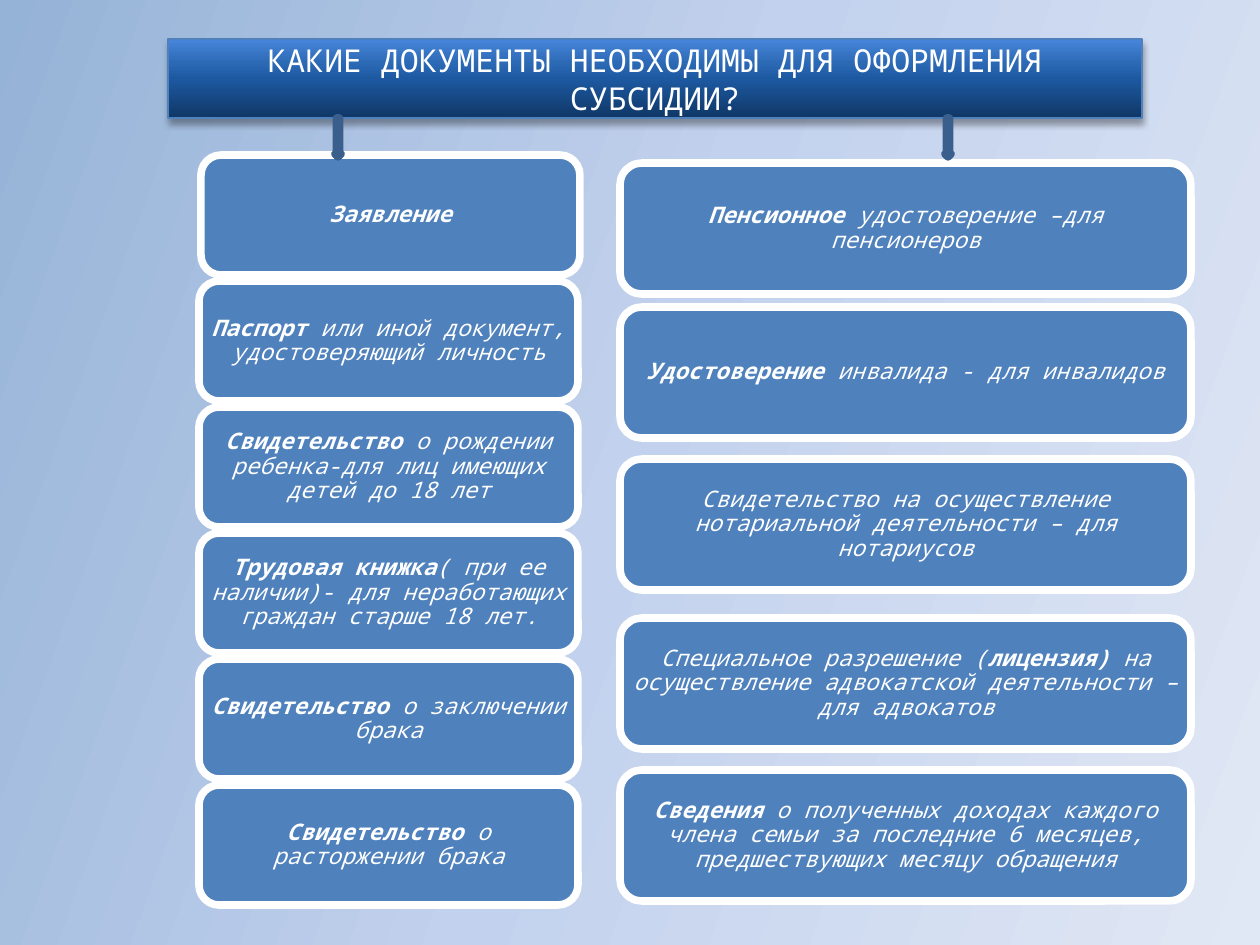
"""Build a slide listing the documents needed to apply for a subsidy."""
from lxml.etree import SubElement
from pptx import Presentation
from pptx.dml.color import RGBColor
from pptx.enum.shapes import MSO_SHAPE as Shape
from pptx.enum.text import MSO_ANCHOR as Anchor, PP_ALIGN as Align
from pptx.oxml.ns import qn
from pptx.util import Pt

PX = 914400 / 126
FONT = "Noto Sans Mono"
BLUE, WHITE, EDGE = "4F81BD", "FFFFFF", "3A5F8C"
color = RGBColor.from_string


def set_gradient(fill, element, stops, clockwise):
    fill.gradient()
    fill.gradient_angle = 360 - clockwise
    stop_list = next(element.iter(qn("a:gsLst")))
    for stop in list(stop_list):
        stop_list.remove(stop)
    for position, value in stops:
        stop = SubElement(stop_list, qn("a:gs"), pos=str(position * 1000))
        SubElement(stop, qn("a:srgbClr"), val=value)


def add_block(kind, bounds, line, width, text="", size=13, margins=(6, 4)):
    block = page.shapes.add_shape(kind, *(round(value * PX) for value in bounds))
    block.shadow.inherit = False
    block.fill.solid()
    block.fill.fore_color.rgb = color(BLUE)
    block.line.color.rgb = color(line)
    block.line.width = Pt(width)
    if text:
        frame = block.text_frame
        frame.word_wrap = True
        frame.vertical_anchor = Anchor.MIDDLE
        frame.margin_left = frame.margin_right = round(margins[0] * PX)
        frame.margin_top = frame.margin_bottom = round(margins[1] * PX)
        para = frame.paragraphs[0]
        para.alignment = Align.CENTER
        para.font.name = FONT
        para.font.size = Pt(size)
        para.font.color.rgb = color(WHITE)
        for index, part in enumerate(text.split("*")):
            if part:
                span = para.add_run()
                span.text = part
                span.font.bold = index % 2 == 1
        if kind == Shape.ROUNDED_RECTANGLE:
            para.font.italic = True
            para.line_spacing = 0.9
    return block


deck = Presentation()
deck.slide_width, deck.slide_height = round(1260 * PX), round(945 * PX)
page = deck.slides.add_slide(deck.slide_layouts[6])
set_gradient(page.background.fill, page.element,
             [(0, "95B3D7"), (50, "C2D1ED"), (100, "E1E8F5")], 20)

title = add_block(Shape.RECTANGLE, (168, 39, 974, 79), BLUE, 0.75,
                  "КАКИЕ ДОКУМЕНТЫ НЕОБХОДИМЫ ДЛЯ ОФОРМЛЕНИЯ СУБСИДИИ?", 18, (13, 6))
set_gradient(title.fill, title.element,
             [(0, "0F3766"), (50, "1D59A1"), (70, "2D6AB6"), (100, "4786DB")], 270)
effects = next(title.element.iter(qn("a:effectLst")))
shadow = SubElement(effects, qn("a:outerShdw"), blurRad=str(Pt(4)), dist=str(Pt(3)),
                    dir="5400000", rotWithShape="0")
shade = SubElement(shadow, qn("a:srgbClr"), val="000000")
SubElement(shade, qn("a:alpha"), val="35000")

general_documents = [
    "*Заявление*",
    "*Паспорт* или иной документ, удостоверяющий личность",
    "*Свидетельство* о рождении ребенка-для лиц имеющих детей до 18 лет",
    "*Трудовая книжка*( при ее наличии)- для неработающих граждан старше 18 лет.",
    "*Свидетельство* о заключении брака",
    "*Свидетельство* о расторжении брака",
]
for row, text in enumerate(general_documents):
    left = 199 if row else 201
    add_block(Shape.ROUNDED_RECTANGLE, (left, 155 + 126 * row, 379, 120), WHITE, 4.33, text)

special_documents = [
    (163, "*Пенсионное* удостоверение –для пенсионеров"),
    (307, "*Удостоверение *инвалида - для инвалидов"),
    (459, "Свидетельство на осуществление нотариальной деятельности – для нотариусов"),
    (618, "Специальное разрешение (*лицензия)* на осуществление адвокатской "
          "деятельности – для адвокатов"),
    (770, "*Сведения* о полученных доходах каждого члена семьи за последние "
          "6 месяцев, предшествующих месяцу обращения"),
]
for top, text in special_documents:
    add_block(Shape.ROUNDED_RECTANGLE, (620, top, 571, 131), WHITE, 4.33, text, margins=(6, 6))

for left in (945, 335):
    add_block(Shape.DOWN_ARROW, (left, 118, 6, 39), EDGE, 4.33)

deck.save("out.pptx")
